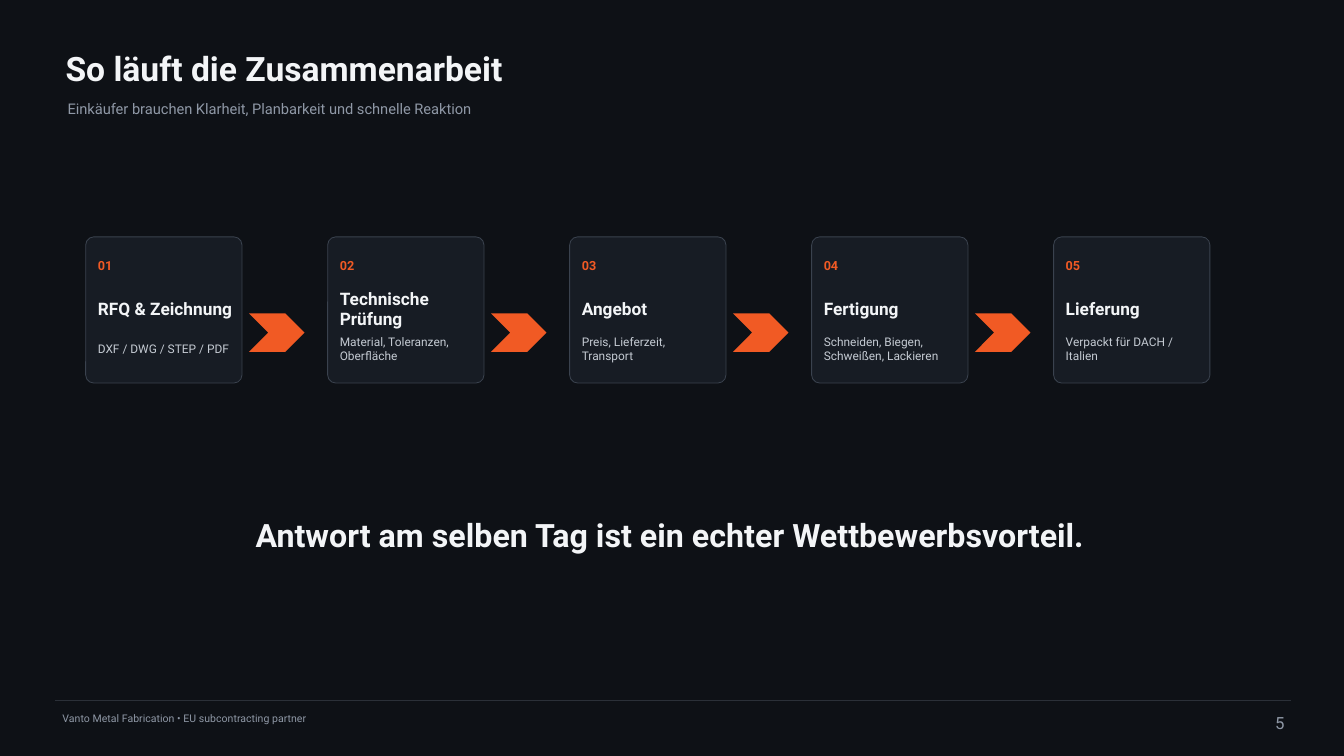
from dataclasses import dataclass

from lxml.etree import SubElement
from pptx import Presentation
from pptx.dml.color import RGBColor
from pptx.enum.shapes import MSO_CONNECTOR, MSO_SHAPE
from pptx.enum.text import MSO_ANCHOR, MSO_AUTO_SIZE, PP_ALIGN
from pptx.oxml.ns import qn
from pptx.util import Emu, Pt

TITLE = "So läuft die Zusammenarbeit"
SUBTITLE = "Einkäufer brauchen Klarheit, Planbarkeit und schnelle Reaktion"
STEPS = [
    ("RFQ & Zeichnung", "DXF / DWG / STEP / PDF"),
    ("Technische Prüfung", "Material, Toleranzen, Oberfläche"),
    ("Angebot", "Preis, Lieferzeit, Transport"),
    ("Fertigung", "Schneiden, Biegen, Schweißen, Lackieren"),
    ("Lieferung", "Verpackt für DACH / Italien"),
]
MESSAGE = "Antwort am selben Tag ist ein echter Wettbewerbsvorteil."
FOOTER = "Vanto Metal Fabrication • EU subcontracting partner"
PAGE_NUMBER = "5"


@dataclass(frozen=True)
class Theme:
    font: str = "Roboto"
    background: str = "0E1116"
    card: str = "171C24"
    card_border: str = "3A424E"
    rule: str = "2B3038"
    accent: str = "F15A24"
    bright: str = "F3F5F7"
    soft: str = "C5CBD3"
    muted: str = "8F98A6"
    title_size: float = 24
    subtitle_size: float = 10.5
    number_size: float = 9
    heading_size: float = 12.3
    detail_size: float = 8.5
    message_size: float = 23
    footer_size: float = 7.5
    page_size: float = 12


THEME = Theme()
EMU_PER_PX = 9144  # 100 px to the inch
CARD_LEFT, CARD_TOP, CARD_WIDTH, CARD_HEIGHT = 85, 235, 155, 145
CARD_STEP, CARD_PADDING = 240, 12
CHEVRON_GAP, CHEVRON_TOP, CHEVRON_WIDTH, CHEVRON_HEIGHT = 7, 311, 55, 38


def px(*lengths):
    return [Emu(length * EMU_PER_PX) for length in lengths]


def color(value):
    return RGBColor.from_string(value)


def write_text(shape, text, size, text_color, bold=False, align=PP_ALIGN.LEFT):
    """Fill a shape with one run, centred vertically and without insets."""
    frame = shape.text_frame
    frame.word_wrap = True
    frame.auto_size = MSO_AUTO_SIZE.NONE
    frame.vertical_anchor = MSO_ANCHOR.MIDDLE
    frame.margin_left = frame.margin_top = frame.margin_right = frame.margin_bottom = 0
    paragraph = frame.paragraphs[0]
    paragraph.alignment = align
    run = paragraph.add_run()
    run.text = text
    run.font.name = THEME.font
    run.font.size = Pt(size)
    run.font.bold = bold
    run.font.color.rgb = color(text_color)
    return frame


def add_text(slide, box, *content, **style):
    return write_text(slide.shapes.add_textbox(*px(*box)), *content, **style)


def add_filled_shape(slide, kind, box, fill):
    shape = slide.shapes.add_shape(kind, *px(*box))
    shape.shadow.inherit = False
    shape.fill.solid()
    shape.fill.fore_color.rgb = color(fill)
    shape.line.fill.background()
    return shape


def add_header(slide):
    title = slide.shapes.title
    title.left, title.top, title.width, title.height = px(65, 45, 820, 45)
    write_text(title, TITLE, THEME.title_size, THEME.bright, bold=True)
    add_text(slide, (67, 96, 770, 24), SUBTITLE, THEME.subtitle_size, THEME.muted)


def add_card(slide, index, heading, detail):
    left = CARD_LEFT + index * CARD_STEP
    card = add_filled_shape(slide, MSO_SHAPE.ROUNDED_RECTANGLE,
                            (left, CARD_TOP, CARD_WIDTH, CARD_HEIGHT), THEME.card)
    card.adjustments[0] = 0.055
    card.line.color.rgb = color(THEME.card_border)
    card.line.width = Pt(0.6)
    text_left = left + CARD_PADDING
    add_text(slide, (text_left, 251, 42, 25), f"{index + 1:02}",
             THEME.number_size, THEME.accent, bold=True)
    add_text(slide, (text_left, 290, 135, 32), heading,
             THEME.heading_size, THEME.bright, bold=True)
    add_text(slide, (text_left, 332, 132, 28), detail, THEME.detail_size, THEME.soft)


def add_process(slide):
    for index in range(len(STEPS) - 1):
        left = CARD_LEFT + index * CARD_STEP + CARD_WIDTH + CHEVRON_GAP
        add_filled_shape(slide, MSO_SHAPE.CHEVRON,
                         (left, CHEVRON_TOP, CHEVRON_WIDTH, CHEVRON_HEIGHT), THEME.accent)
    for index, (heading, detail) in enumerate(STEPS):
        add_card(slide, index, heading, detail)


def add_footer(slide):
    rule = slide.shapes.add_connector(MSO_CONNECTOR.STRAIGHT, *px(55, 695, 1280, 695))
    rule.line.color.rgb = color(THEME.rule)
    rule.line.width = Pt(0.5)
    SubElement(rule._element.spPr, qn("a:effectLst"))
    add_text(slide, (62, 702, 520, 22), FOOTER, THEME.footer_size, THEME.muted)
    page = add_text(slide, (1255, 702, 87, 33), PAGE_NUMBER, THEME.page_size, THEME.muted)
    page.vertical_anchor = MSO_ANCHOR.TOP
    page.margin_left, page.margin_top = px(10, 5)


def main():
    presentation = Presentation()
    presentation.slide_width, presentation.slide_height = px(1333, 750)
    slide = presentation.slides.add_slide(presentation.slide_layouts.get_by_name("Title Only"))
    slide.background.fill.solid()
    slide.background.fill.fore_color.rgb = color(THEME.background)
    add_header(slide)
    add_process(slide)
    add_text(slide, (120, 508, 1090, 45), MESSAGE, THEME.message_size, THEME.bright,
             bold=True, align=PP_ALIGN.CENTER)
    add_footer(slide)
    presentation.save("out.pptx")


if __name__ == "__main__":
    main()
